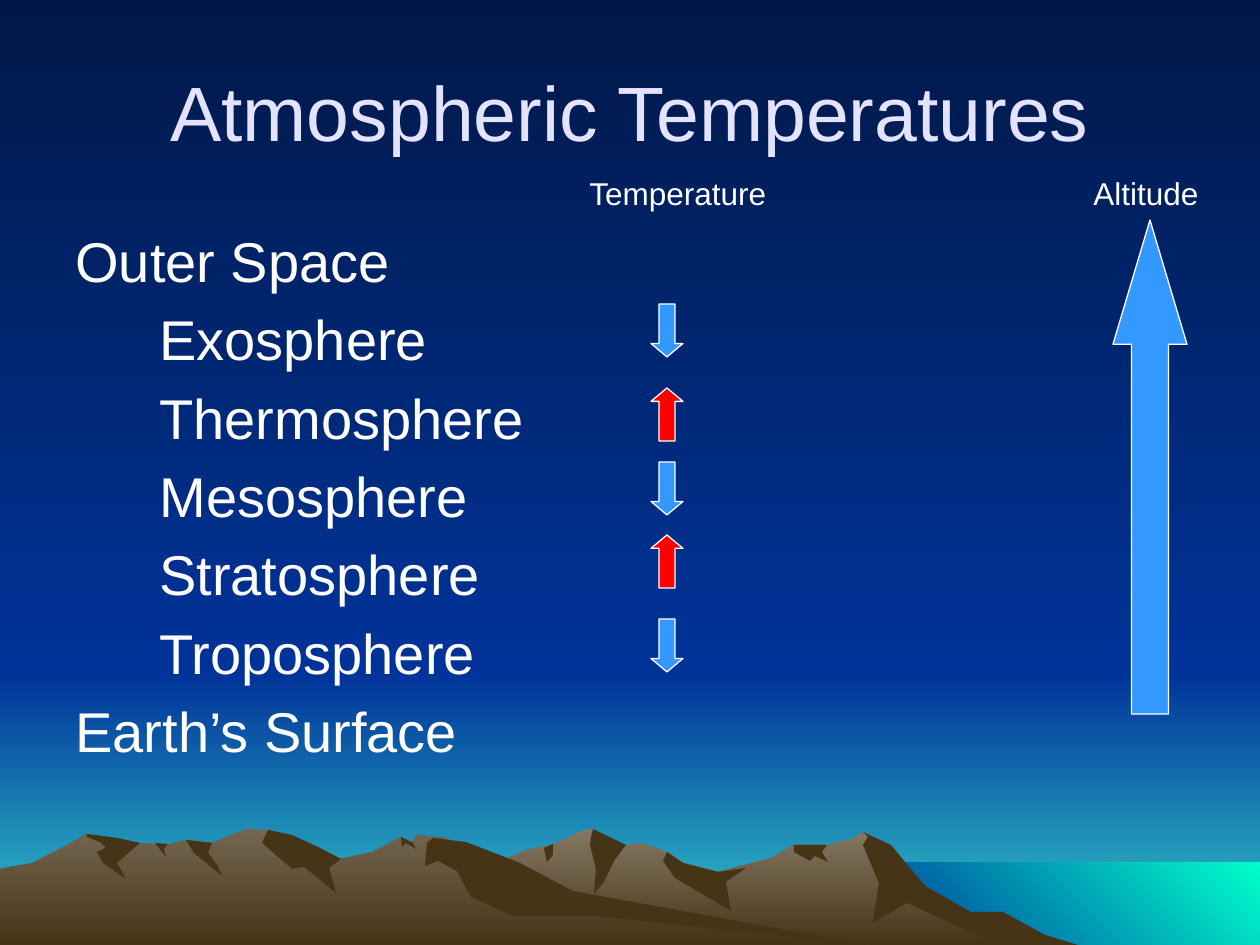
from dataclasses import dataclass
from lxml.etree import SubElement
from pptx import Presentation
from pptx.dml.color import RGBColor
from pptx.enum.shapes import MSO_SHAPE as Preset
from pptx.enum.text import MSO_ANCHOR as Anchor, PP_ALIGN as Align
from pptx.oxml.ns import qn
from pptx.util import Pt

PX = 914400 / 126
WIDTH, HEIGHT = 1260, 945
HORIZON, SEA_LEVEL, SHORE = 672, 862, 861
MARGIN, INDENT = 63, 84
DOWNWARD, UP_RIGHT = 270, 45

NIGHT, BLUE, TEAL, AQUA = "001847", "003399", "33CCCC", "00FFCC"
EARTH, WHITE, LAVENDER = "463416", "FFFFFF", "E3E3FF"
COOLING, WARMING = "3399FF", "FF0000"
DIRECTIONS = {COOLING: Preset.DOWN_ARROW, WARMING: Preset.UP_ARROW}

TREND_CENTER, TREND_WIDTH, TREND_HEIGHT = 667, 32, 53
ALTITUDE_CENTER, ALTITUDE_WIDTH, ALTITUDE_HEIGHT = 1150, 74, 494
BODY_TOP = 220
LABEL_LEFT, ALTITUDE_TAB = 577, 504

LAYERS = [("Exosphere", COOLING, 304), ("Thermosphere", WARMING, 388),
          ("Mesosphere", COOLING, 462), ("Stratosphere", WARMING, 535),
          ("Troposphere", COOLING, 619)]


@dataclass
class MountainRange:
    peak_color: str
    foot_left: int
    foot_right: int
    crest: list
    shadows: dict

    def silhouette(self):
        return [(self.foot_left, HEIGHT), *self.crest, (self.foot_right, HEIGHT)]


EASTERN = MountainRange(
    peak_color="847864", foot_left=325, foot_right=1034,
    crest=[(349, 931), (412, 893), (447, 879), (496, 863), (527, 850),
           (552, 845), (586, 829), (593, 829), (612, 848), (641, 843),
           (667, 852), (683, 863), (718, 872), (772, 858), (793, 845),
           (827, 845), (852, 839), (863, 832), (885, 845), (911, 879),
           (963, 911), (1011, 932)],
    shadows={
        "coastal slope": [
            (863, 832), (891, 845), (925, 886), (971, 912), (1003, 912),
            (1045, 935), (1078, 945), (998, 945), (907, 903), (873, 923),
            (879, 883), (863, 845), (868, 837)],
        "central peak": [
            (593, 829), (591, 837), (590, 845), (596, 869), (594, 894),
            (604, 882), (614, 861), (626, 845)],
        "valley": [
            (667, 852), (663, 861), (675, 878), (731, 911), (726, 882),
            (746, 868), (718, 872), (683, 863)],
        "saddle": [
            (827, 845), (794, 845), (794, 852), (810, 861), (815, 856),
            (828, 862), (822, 852)],
        "notch": [(553, 844), (544, 848), (547, 862), (553, 855)]})

WESTERN = MountainRange(
    peak_color="736650", foot_left=0, foot_right=869,
    crest=[(0, 869), (33, 863), (71, 843), (86, 834), (118, 845),
           (140, 843), (166, 845), (186, 840), (212, 843), (246, 829),
           (271, 830), (297, 845), (341, 859), (373, 852), (401, 837),
           (412, 842), (417, 835), (446, 838), (544, 897), (840, 942)],
    shadows={
        "highest peak": [
            (268, 830), (292, 835), (318, 847), (341, 859), (329, 868),
            (336, 893), (304, 867), (292, 869), (262, 843)],
        "long slope": [
            (427, 843), (433, 838), (466, 842), (518, 862), (573, 891),
            (869, 945), (595, 916), (513, 916), (471, 897), (457, 871),
            (438, 861), (425, 866)],
        "notch": [(401, 837), (413, 843), (416, 849), (406, 843), (402, 847)],
        "inner gully": [
            (186, 840), (212, 843), (208, 853), (218, 866), (222, 876),
            (194, 853)],
        "small gully": [(155, 843), (168, 844), (164, 849), (166, 857)],
        "outer gully": [
            (87, 834), (118, 838), (140, 843), (117, 863), (126, 879),
            (103, 863), (97, 852), (106, 848), (100, 842), (87, 837)]})


def px(length):
    return round(length * PX)


def color(code):
    return RGBColor.from_string(code)


class Painter:
    font = "Arial"

    def __init__(self, slide):
        self.slide = slide

    def gradient(self, fill, start, end, angle=DOWNWARD):
        fill.gradient()
        fill.gradient_angle = angle
        for stop, code in zip(fill.gradient_stops, (start, end)):
            stop.color.rgb = color(code)

    def solid(self, fill, code):
        fill.solid()
        fill.fore_color.rgb = color(code)

    def outline(self, points):
        builder = self.slide.shapes.build_freeform(*points[0], scale=PX)
        builder.add_line_segments(points[1:], close=True)
        area = builder.convert_to_shape()
        area.shadow.inherit = False
        area.line.fill.background()
        return area.fill

    def band(self, left, top, bottom, start, end, angle=DOWNWARD):
        corners = [(left, top), (WIDTH, top), (WIDTH, bottom), (left, bottom)]
        self.gradient(self.outline(corners), start, end, angle)

    def mountains(self, mountain_range):
        self.gradient(self.outline(mountain_range.silhouette()),
                      mountain_range.peak_color, EARTH)
        for shadow in mountain_range.shadows.values():
            self.solid(self.outline(shadow), EARTH)

    def text(self, box, lines, size, code=WHITE, align=Align.LEFT,
             anchor=Anchor.TOP, before=0, hanging=0, tab=0):
        frame = self.slide.shapes.add_textbox(*map(px, box)).text_frame
        frame.word_wrap = True
        frame.vertical_anchor = anchor
        frame.text = "\n".join(lines)
        for paragraph in frame.paragraphs:
            paragraph.alignment = align
            paragraph.space_before = Pt(before)
            properties = paragraph._p.get_or_add_pPr()
            if hanging:
                properties.set("marL", str(px(hanging)))
                properties.set("indent", str(-px(hanging)))
            if tab:
                stops = SubElement(properties, qn("a:tabLst"))
                SubElement(stops, qn("a:tab"), pos=str(px(tab)), algn="l")
            for run in paragraph.runs:
                run.font.name = self.font
                run.font.size = Pt(size)
                run.font.color.rgb = color(code)

    def arrow(self, preset, center, top, width, height, code, head):
        arrow = self.slide.shapes.add_shape(
            preset, *map(px, (center - width / 2, top, width, height)))
        arrow.shadow.inherit = False
        arrow.adjustments[0], arrow.adjustments[1] = 0.5, head
        self.solid(arrow.fill, code)
        arrow.line.color.rgb = color(WHITE)
        arrow.line.width = Pt(0.75)


def main():
    deck = Presentation()
    deck.slide_width, deck.slide_height = px(WIDTH), px(HEIGHT)
    painter = Painter(deck.slides.add_slide(deck.slide_layouts[6]))

    painter.gradient(painter.slide.background.fill, NIGHT, BLUE)
    painter.band(0, HORIZON, HEIGHT, BLUE, TEAL)
    painter.band(0, 0, HORIZON, NIGHT, BLUE)
    painter.band(SHORE, SEA_LEVEL, HEIGHT, BLUE, AQUA, UP_RIGHT)
    for mountain_range in (EASTERN, WESTERN):
        painter.mountains(mountain_range)

    painter.text((MARGIN, 32, WIDTH - 2 * MARGIN, 157),
                 ["Atmospheric Temperatures"], 44, LAVENDER,
                 Align.CENTER, Anchor.MIDDLE)
    layer_lines = [f"\t{name}" for name, trend, top in LAYERS]
    painter.text((MARGIN, BODY_TOP, 725, 620),
                 ["Outer Space", *layer_lines, "Earth’s Surface"], 32,
                 before=6.4, hanging=INDENT)
    painter.text((LABEL_LEFT, 168, 672, 50), ["Temperature\tAltitude"], 18,
                 tab=ALTITUDE_TAB)

    painter.arrow(Preset.UP_ARROW, ALTITUDE_CENTER, BODY_TOP, ALTITUDE_WIDTH,
                  ALTITUDE_HEIGHT, COOLING, 1.68)
    for name, trend, top in LAYERS:
        painter.arrow(DIRECTIONS[trend], TREND_CENTER, top, TREND_WIDTH,
                      TREND_HEIGHT, trend, 0.42)

    deck.save("out.pptx")


if __name__ == "__main__":
    main()
